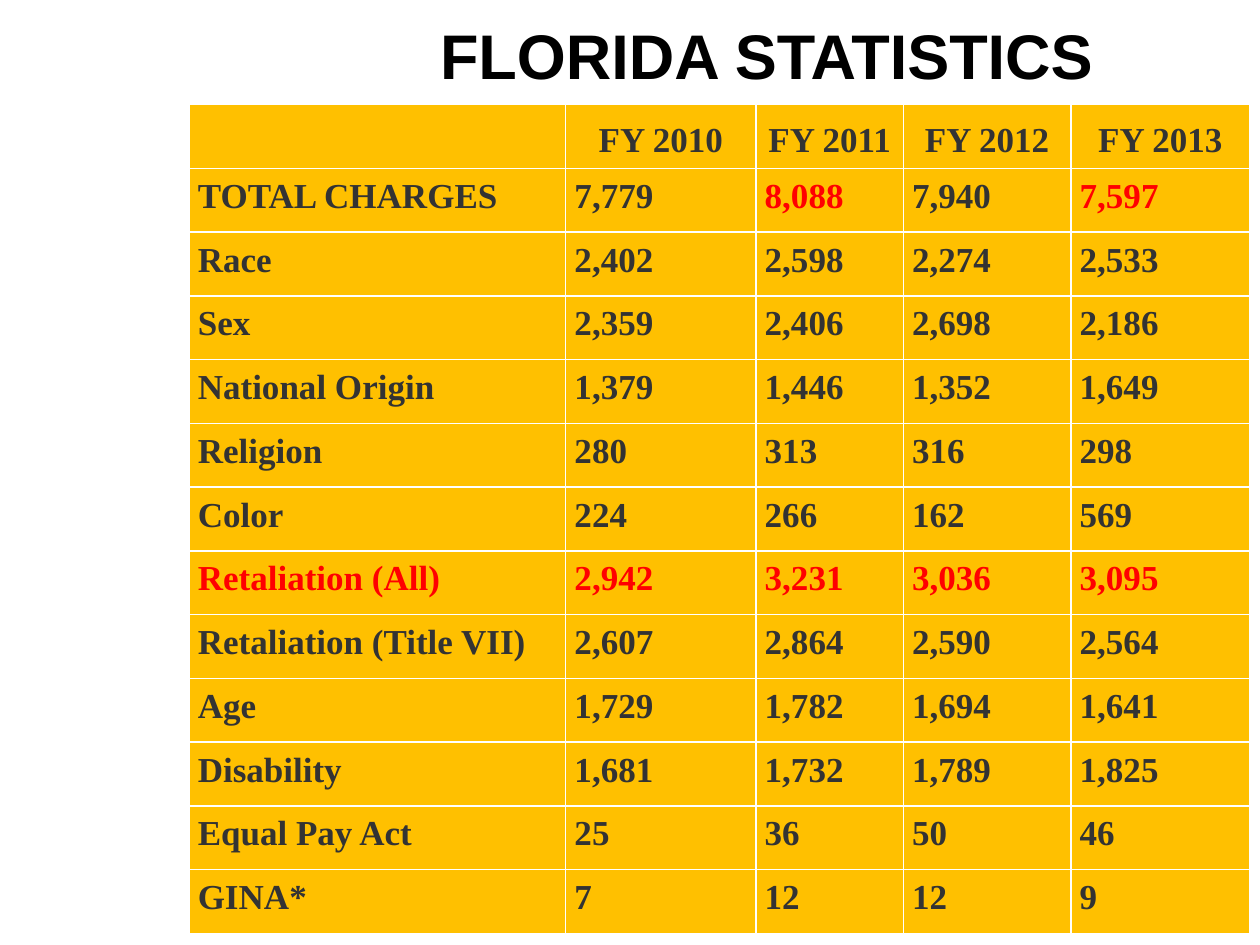
from dataclasses import dataclass

from lxml.etree import SubElement
from pptx import Presentation
from pptx.dml.color import RGBColor as Rgb
from pptx.enum.text import MSO_ANCHOR as Anchor, PP_ALIGN as Align
from pptx.oxml.ns import qn
from pptx.util import Inches, Pt


@dataclass(frozen=True)
class Theme:
    title_font: str = "Arial"
    table_font: str = "Times New Roman"
    title_size: int = 36
    table_size: int = 20
    title_color: str = "000000"
    text_color: str = "333333"
    highlight: str = "FF0000"
    cell_fill: str = "FFC000"
    border: str = "FFFFFF"


THEME = Theme()
SLIDE_WIDTH, SLIDE_HEIGHT = Inches(10), Inches(7.5)
GRID = 100
TITLE_BOX = (21.7, 0.13, 78.3, 14.93)
TABLE_BOX = (15, 11.07, 84.2, 87.73)
COLUMN_WEIGHTS = (2.99, 1.51, 1.17, 1.33, 1.42)
CHARGES = (
    ("", "FY 2010", "FY 2011", "FY 2012", "FY 2013"),
    ("TOTAL CHARGES", "7,779", "8,088", "7,940", "7,597"),
    ("Race", "2,402", "2,598", "2,274", "2,533"),
    ("Sex", "2,359", "2,406", "2,698", "2,186"),
    ("National Origin", "1,379", "1,446", "1,352", "1,649"),
    ("Religion", "280", "313", "316", "298"),
    ("Color", "224", "266", "162", "569"),
    ("Retaliation (All)", "2,942", "3,231", "3,036", "3,095"),
    ("Retaliation (Title VII)", "2,607", "2,864", "2,590", "2,564"),
    ("Age", "1,729", "1,782", "1,694", "1,641"),
    ("Disability", "1,681", "1,732", "1,789", "1,825"),
    ("Equal Pay Act", "25", "36", "50", "46"),
    ("GINA*", "7", "12", "12", "9"),
)
HIGHLIGHTED_ROW = "Retaliation (All)"
HIGHLIGHTED_TOTALS = ("8,088", "7,597")


def grid_box(columns, rows, width, height):
    return (
        round(SLIDE_WIDTH * columns / GRID),
        round(SLIDE_HEIGHT * rows / GRID),
        round(SLIDE_WIDTH * width / GRID),
        round(SLIDE_HEIGHT * height / GRID),
    )


def add_run(paragraph, text, font_name, size, color):
    run = paragraph.add_run()
    run.text = text
    run.font.name = font_name
    run.font.size = Pt(size)
    run.font.bold = True
    run.font.color.rgb = Rgb.from_string(color)


def add_borders(cell):
    properties = cell._tc.get_or_add_tcPr()
    for side in ("a:lnL", "a:lnR", "a:lnT", "a:lnB"):
        line = SubElement(properties, qn(side), w=str(Pt(1)))
        fill = SubElement(line, qn("a:solidFill"))
        SubElement(fill, qn("a:srgbClr"), val=THEME.border)


def place_title(slide, box):
    title = slide.shapes.title
    title.left, title.top, title.width, title.height = box
    frame = title.text_frame
    frame.word_wrap = True
    frame.vertical_anchor = Anchor.TOP
    frame.margin_left = frame.margin_right = Inches(0.1)
    frame.margin_top, frame.margin_bottom = Inches(0.12), Inches(0.05)
    heading = frame.paragraphs[0]
    heading.alignment = Align.CENTER
    add_run(heading, "FLORIDA STATISTICS", THEME.title_font, THEME.title_size, THEME.title_color)


def fill_cell(cell, text, is_header, color):
    add_borders(cell)
    cell.fill.solid()
    cell.fill.fore_color.rgb = Rgb.from_string(THEME.cell_fill)
    cell.margin_left = cell.margin_right = Inches(0.07)
    cell.margin_top = cell.margin_bottom = Inches(0.07)
    cell.vertical_anchor = Anchor.BOTTOM if is_header else Anchor.TOP
    entry = cell.text_frame.paragraphs[0]
    entry.alignment = Align.CENTER if is_header else Align.LEFT
    if text:
        add_run(entry, text, THEME.table_font, THEME.table_size, color)


def place_charges(slide, box):
    width, height = box[2:]
    table = slide.shapes.add_table(len(CHARGES), len(COLUMN_WEIGHTS), *box).table
    for column, weight in zip(table.columns, COLUMN_WEIGHTS):
        column.width = round(width * weight / sum(COLUMN_WEIGHTS))
    for index, (row, entries) in enumerate(zip(table.rows, CHARGES)):
        row.height = height // len(CHARGES)
        for cell, text in zip(row.cells, entries):
            stands_out = entries[0] == HIGHLIGHTED_ROW or text in HIGHLIGHTED_TOTALS
            color = THEME.highlight if stands_out else THEME.text_color
            fill_cell(cell, text, index == 0, color)


def main():
    deck = Presentation()
    deck.slide_width, deck.slide_height = SLIDE_WIDTH, SLIDE_HEIGHT
    slide = deck.slides.add_slide(deck.slide_layouts.get_by_name("Title Only"))
    place_title(slide, grid_box(*TITLE_BOX))
    place_charges(slide, grid_box(*TABLE_BOX))
    deck.save("out.pptx")


if __name__ == "__main__":
    main()
